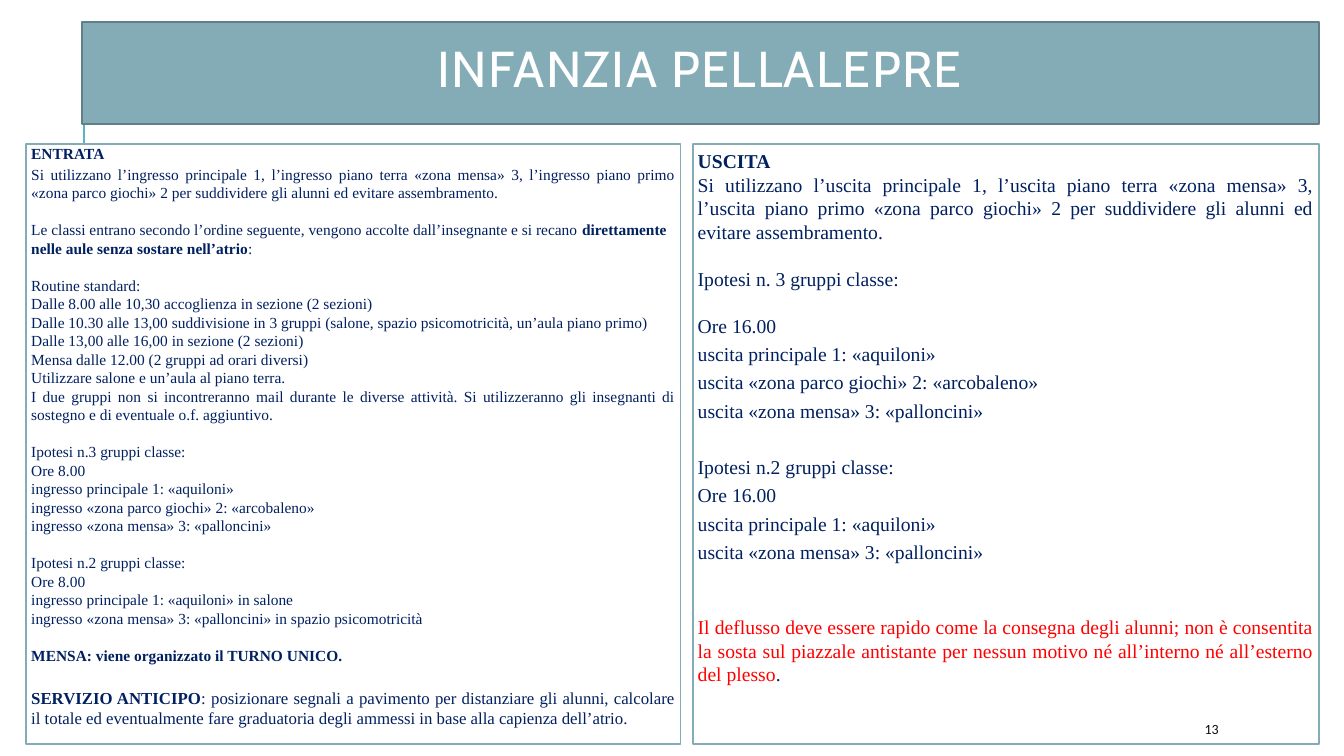
from lxml.etree import SubElement
from pptx import Presentation
from pptx.dml.color import RGBColor
from pptx.enum.shapes import MSO_CONNECTOR
from pptx.enum.text import MSO_ANCHOR, MSO_AUTO_SIZE, PP_ALIGN
from pptx.oxml.ns import qn
from pptx.util import Inches, Pt

NAVY, TEAL, RED = "002060", "84ACB6", "FF0000"
LEFT, JUSTIFY = PP_ALIGN.LEFT, PP_ALIGN.JUSTIFY
ENTRY_GAP, EXIT_GAP = 13.2, 16.8  # points: one line of each column's text

# Paragraphs: space before, alignment, line spacing, size, text (*bold*)
entry = [
    (0, LEFT, 0.7, 11, "*ENTRATA*"),
    (2, JUSTIFY, 1, 11, "Si utilizzano l’ingresso principale 1, l’ingresso piano terra «zona mensa» 3, l’ingresso piano primo «zona parco giochi» 2 per suddividere gli alunni ed evitare assembramento."),
    (ENTRY_GAP, LEFT, 1, 11, "Le classi entrano secondo l’ordine seguente, vengono accolte dall’insegnante e si recano *direttamente nelle aule senza sostare nell’atrio*:"),
    (ENTRY_GAP, LEFT, 1, 11, "Routine standard:"),
    (0, LEFT, 1, 11, "Dalle 8.00 alle 10,30 accoglienza in sezione (2 sezioni)"),
    (0, LEFT, 1, 11, "Dalle 10.30 alle 13,00 suddivisione in 3 gruppi (salone, spazio psicomotricità, un’aula piano primo)"),
    (0, LEFT, 1, 11, "Dalle 13,00 alle 16,00 in sezione (2 sezioni)"),
    (0, LEFT, 1, 11, "Mensa dalle 12.00 (2 gruppi ad orari diversi)"),
    (0, LEFT, 1, 11, "Utilizzare salone e un’aula al piano terra."),
    (0, JUSTIFY, 1, 11, "I due gruppi non si incontreranno mail durante le diverse attività. Si utilizzeranno gli insegnanti di sostegno e di eventuale o.f. aggiuntivo."),
    (ENTRY_GAP, LEFT, 1, 11, "Ipotesi n.3 gruppi classe:"),
    (0, LEFT, 1, 11, "Ore 8.00"),
    (0, LEFT, 1, 11, "ingresso principale 1: «aquiloni»"),
    (0, LEFT, 1, 11, "ingresso «zona parco giochi» 2: «arcobaleno»"),
    (0, JUSTIFY, 1, 11, "ingresso «zona mensa» 3: «palloncini»"),
    (ENTRY_GAP, JUSTIFY, 1, 11, "Ipotesi n.2 gruppi classe:"),
    (0, LEFT, 1, 11, "Ore 8.00"),
    (0, LEFT, 1, 11, "ingresso principale 1: «aquiloni» in salone"),
    (0, JUSTIFY, 1, 11, "ingresso «zona mensa» 3: «palloncini» in spazio psicomotricità"),
    (ENTRY_GAP, JUSTIFY, 1, 11, "*MENSA: viene organizzato il TURNO UNICO.*"),
    (EXIT_GAP, JUSTIFY, 1, 12, "*SERVIZIO ANTICIPO*: posizionare segnali a pavimento per distanziare gli alunni, calcolare il totale ed eventualmente fare graduatoria degli ammessi in base alla capienza dell’atrio."),
]
leaving = [
    (0, LEFT, 1, 14, "*USCITA*"),
    (0, JUSTIFY, 1, 14, "Si utilizzano l’uscita principale 1, l’uscita piano terra «zona mensa» 3, l’uscita piano primo «zona parco giochi» 2 per suddividere gli alunni ed evitare assembramento."),
    (EXIT_GAP, JUSTIFY, 1, 14, "Ipotesi n. 3 gruppi classe:"),
    (EXIT_GAP, LEFT, 1, 14, "Ore 16.00"),
    (0, LEFT, 1.2, 14, "uscita principale 1: «aquiloni»"),
    (0, LEFT, 1.2, 14, "uscita «zona parco giochi» 2: «arcobaleno»"),
    (0, JUSTIFY, 1.2, 14, "uscita «zona mensa» 3: «palloncini»"),
    (EXIT_GAP * 1.2, JUSTIFY, 1.2, 14, "Ipotesi n.2 gruppi classe:"),
    (0, LEFT, 1.2, 14, "Ore 16.00"),
    (0, LEFT, 1.2, 14, "uscita principale 1: «aquiloni»"),
    (0, LEFT, 1.2, 14, "uscita «zona mensa» 3: «palloncini»"),
    (EXIT_GAP * 2.2, JUSTIFY, 1, 14, "Il deflusso deve essere rapido come la consegna degli alunni; non è consentita la sosta sul piazzale antistante per nessun motivo né all’interno né all’esterno del plesso**."),
]


def color(value):
    return RGBColor.from_string(value)


def frame_box(box, left, top, width, height, fill, line):
    box.left, box.top = Inches(left), Inches(top)
    box.width, box.height = Inches(width), Inches(height)
    box.fill.solid()
    box.fill.fore_color.rgb = color(fill)
    box.line.color.rgb = color(line)
    box.line.width = Pt(1.25)
    box.text_frame.word_wrap = True
    box.text_frame.auto_size = MSO_AUTO_SIZE.NONE


deck = Presentation()
deck.slide_width, deck.slide_height = Inches(13.33), Inches(7.5)
page = deck.slides.add_slide(deck.slide_layouts[3])
title, entry_box, leaving_box = page.placeholders

# Vertical rule behind everything else
rule = page.shapes.add_connector(
    MSO_CONNECTOR.STRAIGHT, Inches(0.83), Inches(1.9), Inches(0.83), Inches(0.9))
rule.line.color.rgb = color("58B6C0")
rule.line.width = Pt(1.5)
SubElement(rule._element.spPr, qn("a:effectLst"))
title._element.addprevious(rule._element)

# Title band
frame_box(title, 0.81, 0.22, 12.27, 1.01, TEAL, "627F87")
title.text_frame.text = "INFANZIA PELLALEPRE"
title.text_frame.vertical_anchor = MSO_ANCHOR.MIDDLE
para = title.text_frame.paragraphs[0]
para.alignment = PP_ALIGN.CENTER
para.line_spacing = 0.8
para.font.name, para.font.size = "Cabin", Pt(36)
para.font.color.rgb = color("FFFFFF")
para.runs[0].font._element.set("spc", "100")

# Entry and exit columns
for box, left, width, rows in (
        (entry_box, 0.26, 6.49, entry), (leaving_box, 6.87, 6.21, leaving)):
    frame_box(box, left, 1.43, width, 5.95, "FFFFFF", TEAL)
    frame = box.text_frame
    frame.vertical_anchor = MSO_ANCHOR.TOP
    frame.margin_left = frame.margin_right = Inches(0.05)
    frame.margin_top = frame.margin_bottom = Inches(0.05)
    for number, (gap, alignment, spacing, size, text) in enumerate(rows):
        para = frame.add_paragraph() if number else frame.paragraphs[0]
        para.alignment, para.line_spacing = alignment, float(spacing)
        para.space_before, para.space_after = Pt(gap), Pt(0)
        properties = para._p.get_or_add_pPr()
        properties.set("marL", "0")
        properties.set("indent", "0")
        SubElement(properties, qn("a:buNone"))
        para.font.name, para.font.size = "Times New Roman", Pt(size)
        para.font.color.rgb = color(NAVY)
        for position, piece in enumerate(text.split("*")):
            if piece:
                span = para.add_run()
                span.text = piece
                span.font.bold = position % 2 == 1

# Closing warning in red, up to its full stop
leaving_box.text_frame.paragraphs[-1].runs[0].font.color.rgb = color(RED)

# Page number
number_box = page.shapes.add_textbox(
    Inches(11.85), Inches(7.08), Inches(1.06), Inches(0.3))
number_box.text_frame.word_wrap = True
number_box.text_frame.vertical_anchor = MSO_ANCHOR.MIDDLE
number_box.text_frame.text = "13"
para = number_box.text_frame.paragraphs[0]
para.font.name, para.font.size = "Calibri", Pt(10)
para.font.color.rgb = color("0D0D0D")

deck.save("out.pptx")
